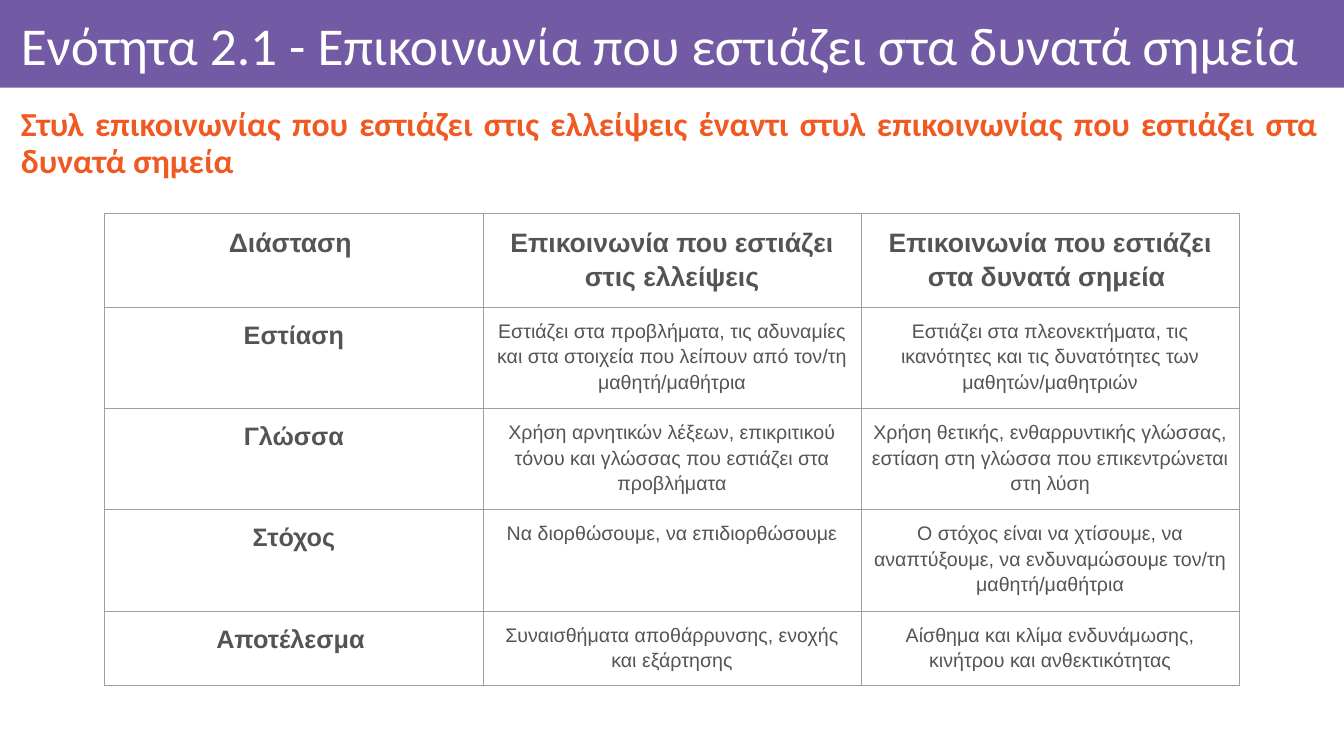
import pptx
import pptx.dml.color
import pptx.enum.shapes
import pptx.enum.text
import pptx.oxml
import pptx.oxml.ns
import pptx.util
from lxml import etree

Inches, Pt = pptx.util.Inches, pptx.util.Pt
ALIGN = pptx.enum.text.PP_ALIGN
MIDDLE = pptx.enum.text.MSO_ANCHOR.MIDDLE

TITLE = "Ενότητα 2.1 - Επικοινωνία που εστιάζει στα δυνατά σημεία"
SUBTITLE = ("Στυλ επικοινωνίας που εστιάζει στις ελλείψεις έναντι "
            "στυλ επικοινωνίας που εστιάζει στα δυνατά σημεία ")
COMPARISON = [
    ("Διάσταση ",
     "Επικοινωνία που εστιάζει στις ελλείψεις",
     "Επικοινωνία που εστιάζει στα δυνατά σημεία "),
    ("Εστίαση",
     "Εστιάζει στα προβλήματα, τις αδυναμίες και στα στοιχεία που λείπουν από τον/τη μαθητή/μαθήτρια",
     "Εστιάζει στα πλεονεκτήματα, τις ικανότητες και τις δυνατότητες των μαθητών/μαθητριών"),
    ("Γλώσσα",
     "Χρήση αρνητικών λέξεων, επικριτικού τόνου και γλώσσας που εστιάζει στα προβλήματα",
     "Χρήση θετικής, ενθαρρυντικής γλώσσας, εστίαση στη γλώσσα που επικεντρώνεται στη λύση"),
    ("Στόχος",
     "Να διορθώσουμε, να επιδιορθώσουμε",
     "Ο στόχος είναι να χτίσουμε, να αναπτύξουμε, να ενδυναμώσουμε τον/τη μαθητή/μαθήτρια"),
    ("Αποτέλεσμα ",
     "Συναισθήματα αποθάρρυνσης, ενοχής και εξάρτησης",
     "Αίσθημα και κλίμα ενδυνάμωσης, κινήτρου και ανθεκτικότητας"),
]
ROW_HEIGHTS = (0.87, 0.95, 0.95, 0.95, 0.7)
COLUMN_WIDTH = 3.75

THEME = {
    "banner": "735AA5", "grid": "9E9E9E", "grid_width": 0.75,
    # font, size, colour, bold
    "title": ("Calibri", 38, "FFFFFF", False),
    "subtitle": ("Calibri", 24, "F05A22", True),
    "header": ("Arial", 19, "545454", True),
    "dimension": ("Arial", 18, "545454", True),
    "body": ("Arial", 14, "545454", False),
}


def rgb(value):
    return pptx.dml.color.RGBColor.from_string(value)


def write(tf, text, style, align, line_spacing):
    p = tf.paragraphs[0]
    p.alignment, p.line_spacing = align, line_spacing
    r = p.add_run()
    r.text = text
    r.font.name, size, color, r.font.bold = THEME[style]
    r.font.size = Pt(size)
    r.font.color.rgb = rgb(color)
    return p


def add_heading(s, box, insets, text, style, align):
    tf = s.shapes.add_textbox(*map(Inches, box)).text_frame
    tf.word_wrap = True
    tf.vertical_anchor = MIDDLE
    (tf.margin_left, tf.margin_top,
     tf.margin_right, tf.margin_bottom) = map(Inches, insets)
    write(tf, text, style, align, 0.9)


def set_borders(cell):
    tcPr = cell._tc.get_or_add_tcPr()
    for i, side in enumerate(("lnL", "lnR", "lnT", "lnB")):
        ln = etree.Element(pptx.oxml.ns.qn("a:" + side),
                           w=str(Pt(THEME["grid_width"])))
        fill = etree.SubElement(ln, pptx.oxml.ns.qn("a:solidFill"))
        etree.SubElement(fill, pptx.oxml.ns.qn("a:srgbClr"), val=THEME["grid"])
        tcPr.insert(i, ln)


def add_comparison(s):
    columns = len(COMPARISON[0])
    table = s.shapes.add_table(
        len(COMPARISON), columns, Inches(1.04), Inches(2.12),
        Inches(COLUMN_WIDTH * columns), Inches(sum(ROW_HEIGHTS))).table
    table.first_row = table.horz_banding = False
    for column in table.columns:
        column.width = Inches(COLUMN_WIDTH)
    for i, texts in enumerate(COMPARISON):
        table.rows[i].height = Inches(ROW_HEIGHTS[i])
        for j, text in enumerate(texts):
            cell = table.cell(i, j)
            cell.fill.background()
            cell.margin_left = cell.margin_right = Inches(0.1)
            cell.margin_top = cell.margin_bottom = Inches(0.1)
            style = "header" if i == 0 else "dimension" if j == 0 else "body"
            p = write(cell.text_frame, text, style, ALIGN.CENTER, 1.15)
            p.space_before = Pt(12)
            p.space_after = Pt(0 if j and i in (1, 2) else 12)
            set_borders(cell)


def main():
    prs = pptx.Presentation()
    prs.slide_width, prs.slide_height = Inches(13.33), Inches(7.5)
    s = prs.slides.add_slide(prs.slide_layouts[6])

    banner = s.shapes.add_shape(pptx.enum.shapes.MSO_SHAPE.RECTANGLE,
                                0, 0, prs.slide_width, Inches(0.87))
    banner.shadow.inherit = False
    banner.fill.solid()
    banner.fill.fore_color.rgb = rgb(THEME["banner"])
    banner.line.fill.background()

    add_heading(s, (0.11, 0.09, 13.06, 0.78), (0.1, 0.06, 0.06, 0.06),
                TITLE, "title", ALIGN.LEFT)
    add_heading(s, (0.11, 1.13, 13.06, 0.6), (0.1, 0.05, 0.1, 0.05),
                SUBTITLE, "subtitle", ALIGN.JUSTIFY)
    add_comparison(s)
    prs.save("out.pptx")


if __name__ == "__main__":
    main()
